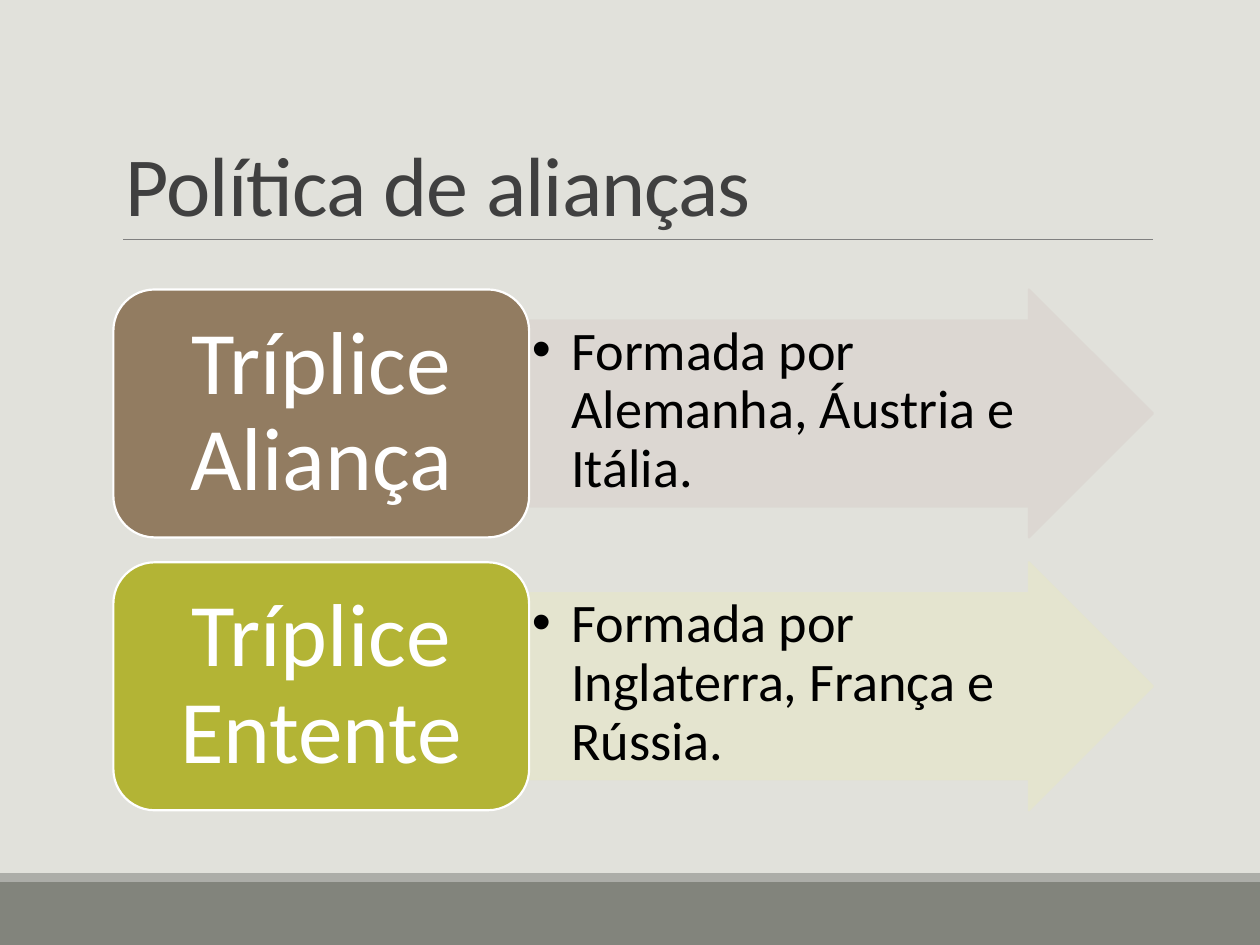
from dataclasses import dataclass

from lxml import etree
from pptx import Presentation
from pptx import util as u
from pptx.dml.color import RGBColor
from pptx.enum import shapes, text
from pptx.oxml import ns

Pt = u.Pt

BACKGROUND = RGBColor(0xE1, 0xE1, 0xDB)
FOOTER = RGBColor(0x82, 0x84, 0x7C)
FOOTER_EDGE = RGBColor(0xAC, 0xAD, 0xA8)
RULE = RGBColor(0x80, 0x80, 0x80)
TITLE = RGBColor(0x40, 0x40, 0x40)
BLACK = RGBColor(0x00, 0x00, 0x00)
WHITE = RGBColor(0xFF, 0xFF, 0xFF)
BROWN = RGBColor(0x92, 0x7C, 0x61)
PALE_BROWN = RGBColor(0xDC, 0xD7, 0xD2)
OLIVE = RGBColor(0xB3, 0xB4, 0x35)
PALE_OLIVE = RGBColor(0xE5, 0xE5, 0xCE)

SLIDE_W, SLIDE_H = 720, 540
LEFT, RIGHT, RULE_Y = 64.8, 658.8, 136.8
NAME_W, ROW_H = 237.6, 141.7
FIRST_ROW_Y, ROW_STEP = 165.4, 155.9
BULLET_INDENT = 22.5


@dataclass(frozen=True)
class Box:
    left: float
    top: float
    width: float
    height: float

    def lengths(self) -> list:
        return [Pt(v) for v in (self.left, self.top, self.width, self.height)]


@dataclass(frozen=True)
class Alliance:
    name: str
    members: str
    color: RGBColor
    pale: RGBColor


@dataclass(frozen=True)
class TextStyle:
    size: float
    color: RGBColor
    align: text.PP_ALIGN
    anchor: text.MSO_ANCHOR
    spacing: float
    inset_x: float
    inset_y: float


TITLE_STYLE = TextStyle(48, TITLE, text.PP_ALIGN.LEFT, text.MSO_ANCHOR.BOTTOM, 0.85, 7.2, 3.6)
NAME_STYLE = TextStyle(51, WHITE, text.PP_ALIGN.CENTER, text.MSO_ANCHOR.MIDDLE, 0.9, 15.3, 7.65)
MEMBERS_STYLE = TextStyle(31, BLACK, text.PP_ALIGN.LEFT, text.MSO_ANCHOR.TOP, 0.9, 1.55, 1.55)

ALLIANCES = [
    Alliance("Tríplice Aliança", "Formada por Alemanha, Áustria e Itália.", BROWN, PALE_BROWN),
    Alliance("Tríplice Entente", "Formada por Inglaterra, França e Rússia.", OLIVE, PALE_OLIVE),
]


def apply(target, values: dict) -> None:
    for key, value in values.items():
        setattr(target, key, value)


def write(shape, content: str, style: TextStyle):
    frame = shape.text_frame
    apply(frame, {
        "word_wrap": True,
        "vertical_anchor": style.anchor,
        "margin_left": Pt(style.inset_x),
        "margin_right": Pt(style.inset_x),
        "margin_top": Pt(style.inset_y),
        "margin_bottom": Pt(style.inset_y),
    })
    paragraph = frame.paragraphs[0]
    apply(paragraph, {"alignment": style.align, "line_spacing": style.spacing})
    run = paragraph.add_run()
    run.text = content
    apply(run.font, {"name": "Calibri", "size": Pt(style.size)})
    run.font.color.rgb = style.color
    return paragraph


def add_block(slide, preset: shapes.MSO_SHAPE, box: Box, fill: RGBColor, line: RGBColor | None = None):
    block = slide.shapes.add_shape(preset, *box.lengths())
    block.shadow.inherit = False
    block.fill.solid()
    block.fill.fore_color.rgb = fill
    if line is None:
        block.line.fill.background()
    else:
        block.line.color.rgb = line
        block.line.width = Pt(1.25)
    return block


def make_translucent(shape, percent: int) -> None:
    for color in shape._element.spPr.iter(ns.qn("a:srgbClr")):
        etree.SubElement(color, ns.qn("a:alpha"), val=str(percent * 1000))


def add_bullet(paragraph) -> None:
    properties = paragraph._p.get_or_add_pPr()
    indent = Pt(BULLET_INDENT)
    properties.set("marL", str(indent))
    properties.set("indent", str(-indent))
    etree.SubElement(properties, ns.qn("a:buFont"), typeface="Arial")
    etree.SubElement(properties, ns.qn("a:buChar"), char="•")


def add_frame(slide) -> None:
    slide.background.fill.solid()
    slide.background.fill.fore_color.rgb = BACKGROUND
    add_block(slide, shapes.MSO_SHAPE.RECTANGLE, Box(0, 504, SLIDE_W, 36), FOOTER)
    add_block(slide, shapes.MSO_SHAPE.RECTANGLE, Box(0, 499, SLIDE_W, 5), FOOTER_EDGE)
    rule = slide.shapes.add_connector(
        shapes.MSO_CONNECTOR.STRAIGHT, Pt(70.5), Pt(RULE_Y), Pt(RIGHT), Pt(RULE_Y))
    rule.line.color.rgb = RULE
    rule.line.width = Pt(0.5)
    etree.SubElement(rule._element.spPr, ns.qn("a:effectLst"))


def add_title(slide, content: str) -> None:
    title = slide.shapes.add_textbox(*Box(LEFT, 22.3, RIGHT - LEFT, RULE_Y - 22.3).lengths())
    paragraph = write(title, content, TITLE_STYLE)
    paragraph.runs[0].font._element.set("spc", "-50")


def add_alliance(slide, alliance: Alliance, top: float) -> None:
    split = LEFT + NAME_W
    arrow = add_block(slide, shapes.MSO_SHAPE.RIGHT_ARROW,
                      Box(split, top, RIGHT - split, ROW_H), alliance.pale, alliance.pale)
    arrow.adjustments[0] = 0.75
    arrow.adjustments[1] = 0.5
    make_translucent(arrow, 90)
    add_bullet(write(arrow, alliance.members, MEMBERS_STYLE))

    name = add_block(slide, shapes.MSO_SHAPE.ROUNDED_RECTANGLE,
                     Box(LEFT, top, NAME_W, ROW_H), alliance.color, WHITE)
    write(name, alliance.name, NAME_STYLE)


def main() -> None:
    deck = Presentation()
    apply(deck, {"slide_width": Pt(SLIDE_W), "slide_height": Pt(SLIDE_H)})
    slide = deck.slides.add_slide(deck.slide_layouts[6])
    add_frame(slide)
    add_title(slide, "Política de alianças")
    for row, alliance in enumerate(ALLIANCES):
        add_alliance(slide, alliance, FIRST_ROW_Y + row * ROW_STEP)
    deck.save("out.pptx")


if __name__ == "__main__":
    main()
